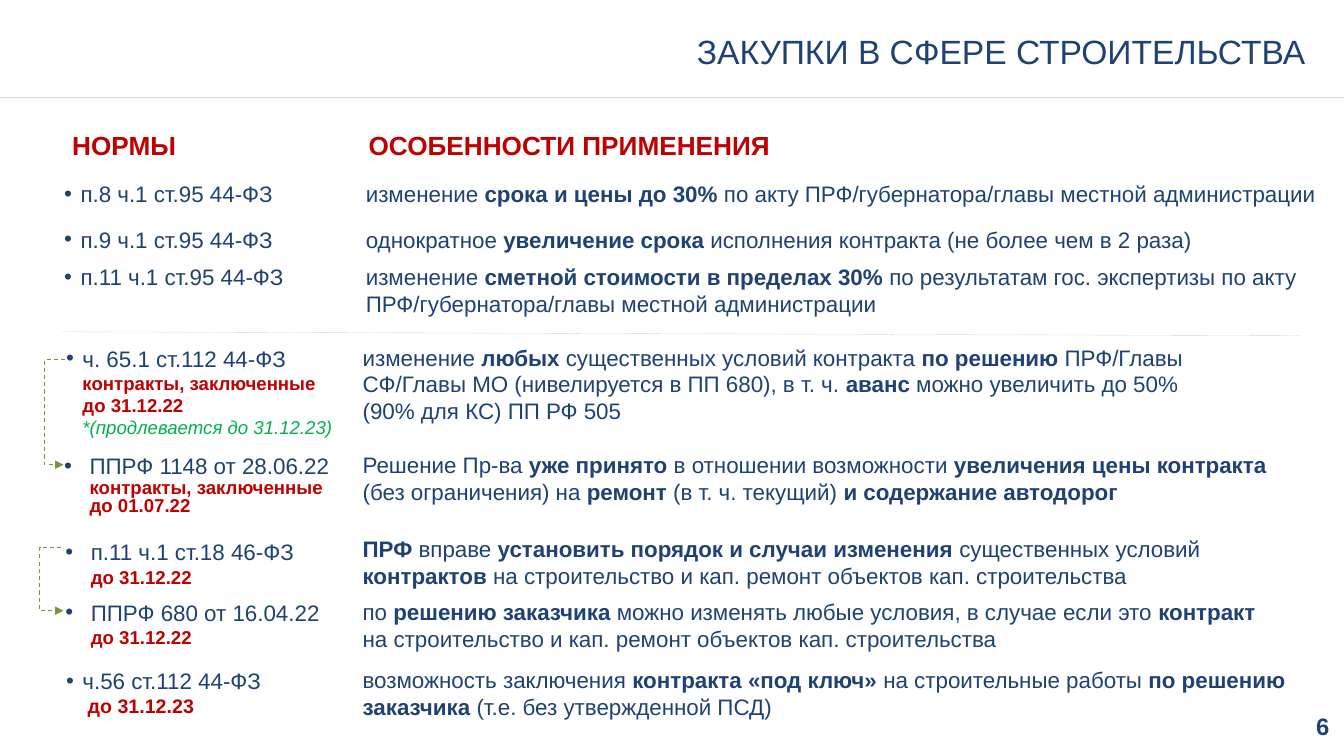
import copy

import pptx
import pptx.dml.color
import pptx.enum.dml
import pptx.enum.shapes
import pptx.enum.text
import pptx.oxml
import pptx.oxml.ns
import pptx.util

Cm = pptx.util.Cm
Pt = pptx.util.Pt
RGBColor = pptx.dml.color.RGBColor
PP_ALIGN = pptx.enum.text.PP_ALIGN
MSO_CONNECTOR = pptx.enum.shapes.MSO_CONNECTOR

NAVY = RGBColor(0x1F, 0x41, 0x74)
RED = RGBColor(0xC0, 0x00, 0x00)
GREEN = RGBColor(0x00, 0xB0, 0x50)
OLIVE = RGBColor(0x77, 0x93, 0x3C)
PALE_GREY = RGBColor(0xD9, 0xD9, 0xD9)
GREY = RGBColor(0xBF, 0xBF, 0xBF)

TITLE = {"size": Pt(24), "color": NAVY, "bold": False}
HEADING = {"size": Pt(18.7), "color": RED, "bold": True}
BODY = {"size": Pt(16), "color": NAVY, "bold": False}
STRONG = {**BODY, "bold": True}
DEADLINE = {"size": Pt(13.3), "color": RED, "bold": True}
LAST_DEADLINE = {**DEADLINE, "size": Pt(14)}
EXTENSION = {"size": Pt(13.3), "color": GREEN, "bold": False, "italic": True}
NUMBER = {"size": Pt(17), "color": NAVY, "bold": True}

NARROW = {"hanging": Cm(0.41)}
WIDE = {"hanging": Cm(0.64), "before": Pt(8)}
TIGHT = {"hanging": Cm(0.64), "spacing": Pt(13.3)}

# Boxes are (left, top, width, height) in centimetres.
# A paragraph is (runs, format); a run is (text, font).
TITLE_BOX = (10.03, 0.51, 23.57, 1.57)
TITLE_TEXT = [([("ЗАКУПКИ В СФЕРЕ СТРОИТЕЛЬСТВА", TITLE)], {"align": PP_ALIGN.RIGHT})]

LIST_BOX = (1.4, 13.44, 7.65, 3.05)
LIST_TEXT = [
    ([("п.11 ч.1 ст.18 46-ФЗ\n", BODY), ("до 31.12.22", DEADLINE)], {"hanging": Cm(0.64)}),
    ([("ППРФ 680 от 16.04.22\n", BODY), ("до 31.12.22", DEADLINE)], WIDE),
]

TEXT_BOXES = [
    ((1.57, 3.12, 5.92, 1.07), [([("НОРМЫ", HEADING)], {})]),
    ((9.04, 3.12, 17.22, 1.07), [([("ОСОБЕННОСТИ ПРИМЕНЕНИЯ", HEADING)], {})]),
    ((1.37, 4.42, 6.78, 0.94), [([("п.8 ч.1 ст.95 44-ФЗ", BODY)], NARROW)]),
    ((1.37, 5.56, 6.78, 0.94), [([("п.9 ч.1 ст.95 44-ФЗ", BODY)], NARROW)]),
    ((1.37, 6.5, 6.78, 0.94), [([("п.11 ч.1 ст.95 44-ФЗ", BODY)], NARROW)]),
    ((1.42, 8.56, 7.4, 2.64), [([
        ("ч. 65.1 ст.112 44-ФЗ\n", BODY),
        ("контракты, заключенные до 31.12.22\n", DEADLINE),
        ("*(продлевается до 31.12.23)", EXTENSION)], NARROW)]),
    ((1.37, 11.48, 8.08, 1.65), [([
        ("ППРФ 1148 от 28.06.22\n", BODY),
        ("контракты, заключенные\nдо 01.07.22", DEADLINE)], TIGHT)]),
    ((1.42, 16.69, 6.78, 1.55), [
        ([("ч.56 ст.112 44-ФЗ", BODY)], NARROW),
        ([("до 31.12.23", LAST_DEADLINE)], {"margin": Cm(0.54)})]),
]

# Text between bars is bold.
FEATURES = [
    ((8.97, 4.42, 24.8, 0.94), "изменение |срока и цены до 30% |"
     "по акту ПРФ/губернатора/главы местной администрации"),
    ((8.97, 5.56, 24.8, 0.94), "однократное |увеличение срока |"
     "исполнения контракта (не более чем в 2 раза)"),
    ((8.97, 6.5, 24.8, 1.63), "изменение |сметной стоимости в пределах 30% |"
     "по результатам гос. экспертизы по акту ПРФ/губернатора/главы местной администрации"),
    ((8.89, 8.53, 23.62, 2.31), "изменение |любых |существенных условий контракта |"
     "по решению |ПРФ/Главы СФ/Главы МО (нивелируется в ПП 680), в т. ч. |аванс |"
     "можно увеличить до 50%\n(90% для КС) ПП РФ 505"),
    ((8.89, 11.23, 23.62, 1.63), "Решение Пр-ва |уже принято |в отношении возможности |"
     "увеличения цены контракта |(без ограничения) на |ремонт |(в т. ч. текущий) |"
     "и содержание автодорог"),
    ((8.89, 13.36, 24.1, 2.31), "|ПРФ |вправе |установить порядок и случаи изменения |"
     "существенных условий |контрактов |"
     "на строительство и кап. ремонт объектов кап. строительства"),
    ((8.89, 14.94, 23.55, 1.63), "по |решению заказчика |"
     "можно изменять любые условия, в случае если это |контракт |"
     "на строительство и кап. ремонт объектов кап. строительства"),
    ((8.89, 16.66, 24.8, 1.63), "возможность заключения |контракта «под ключ» |"
     "на строительные работы |по решению заказчика| (т.е. без утвержденной ПСД)"),
]

NUMBER_BOX = (32.46, 17.93, 1.04, 0.74)
NUMBER_TEXT = [([("6", NUMBER)], {"align": PP_ALIGN.RIGHT})]

# Lines are (start x, start y, end x, end y) in centimetres.
HEADER_RULE = (0, 2.46, 33.87, 2.46)
DIVIDER = (1.55, 8.36, 32.79, 8.46)
BRACKETS = [((1.65, 9.07, 1.6, 11.71), 1.12), ((1.55, 13.79, 1.6, 15.39), 1)]


def add_element(parent, tag, **attributes):
    element = pptx.oxml.parse_xml(f'<a:{tag} {pptx.oxml.ns.nsdecls("a")}/>')
    for name, value in attributes.items():
        element.set(name, value)
    parent.append(element)


def add_run(paragraph, text, font_format):
    """Add text in one format; line breaks get the same size as the text."""
    for index, line in enumerate(text.split("\n")):
        if index:
            paragraph.add_line_break()
            paragraph._p[-1].append(copy.deepcopy(run._r.get_or_add_rPr()))
        if line:
            run = paragraph.add_run()
            run.text = line
            run.font.name = "Arial"
            for name, value in font_format.items():
                if name == "color":
                    run.font.color.rgb = value
                else:
                    setattr(run.font, name, value)


def fill_box(shape, box, paragraphs, insets=(0.25, 0.13, 0.25, 0.13)):
    shape.left, shape.top, shape.width, shape.height = map(Cm, box)
    frame = shape.text_frame
    frame_format = {
        "word_wrap": True,
        "auto_size": pptx.enum.text.MSO_AUTO_SIZE.NONE,
        "vertical_anchor": pptx.enum.text.MSO_ANCHOR.TOP,
    }
    for side, inset in zip(("left", "top", "right", "bottom"), insets):
        frame_format["margin_" + side] = Cm(inset)
    for name, value in frame_format.items():
        setattr(frame, name, value)

    for index, (runs, layout) in enumerate(paragraphs):
        paragraph = frame.add_paragraph() if index else frame.paragraphs[0]
        paragraph.alignment = layout.get("align", PP_ALIGN.LEFT)
        paragraph.space_before = layout.get("before", Pt(0))
        paragraph.line_spacing = layout.get("spacing", 1.0)
        hanging = layout.get("hanging", 0)
        properties = paragraph._p.get_or_add_pPr()
        properties.set("marL", str(layout.get("margin", hanging)))
        properties.set("indent", str(-hanging))
        if hanging:
            add_element(properties, "buFont", typeface="Arial")
            add_element(properties, "buChar", char="•")
        else:
            add_element(properties, "buNone")
        for text, font_format in runs:
            add_run(paragraph, text, font_format)


def add_line(shapes, ends, color, width, kind=MSO_CONNECTOR.STRAIGHT, dashed=False):
    connector = shapes.add_connector(kind, *map(Cm, ends))
    connector.line.color.rgb = color
    connector.line.width = Pt(width)
    if dashed:
        connector.line.dash_style = pptx.enum.dml.MSO_LINE.DASH
    add_element(connector._element.spPr, "effectLst")
    return connector


def add_bracket(shapes, ends, bend):
    """Draw an elbow arrow whose vertical part stands at x = bend."""
    bracket = add_line(shapes, ends, OLIVE, 0.75, MSO_CONNECTOR.ELBOW, dashed=True)
    add_element(bracket.line._get_or_add_ln(), "tailEnd", type="triangle")
    start, end = ends[0], ends[2]
    share = round((bend - start) / (end - start) * 100000)
    adjustments = bracket._element.xpath(".//a:avLst")[0]
    add_element(adjustments, "gd", name="adj1", fmla=f"val {share}")


def main():
    presentation = pptx.Presentation()
    presentation.slide_width = Cm(33.87)
    presentation.slide_height = Cm(19.05)
    slide = presentation.slides.add_slide(presentation.slide_layouts[1])
    shapes = slide.shapes

    add_line(shapes, HEADER_RULE, PALE_GREY, 1)
    add_line(shapes, DIVIDER, GREY, 0.25, dashed=True)
    fill_box(shapes.title, TITLE_BOX, TITLE_TEXT, (0.53, 0.28, 0.7, 0.28))
    fill_box(slide.placeholders[1], LIST_BOX, LIST_TEXT)

    features = [
        (box, [([(part, STRONG if index % 2 else BODY)
                 for index, part in enumerate(text.split("|"))], {})])
        for box, text in FEATURES
    ]
    for box, paragraphs in TEXT_BOXES + features:
        fill_box(shapes.add_textbox(*map(Cm, box)), box, paragraphs)
    number = shapes.add_textbox(*map(Cm, NUMBER_BOX))
    fill_box(number, NUMBER_BOX, NUMBER_TEXT, (0, 0, 0, 0))

    for ends, bend in BRACKETS:
        add_bracket(shapes, ends, bend)
    presentation.save("out.pptx")


if __name__ == "__main__":
    main()
